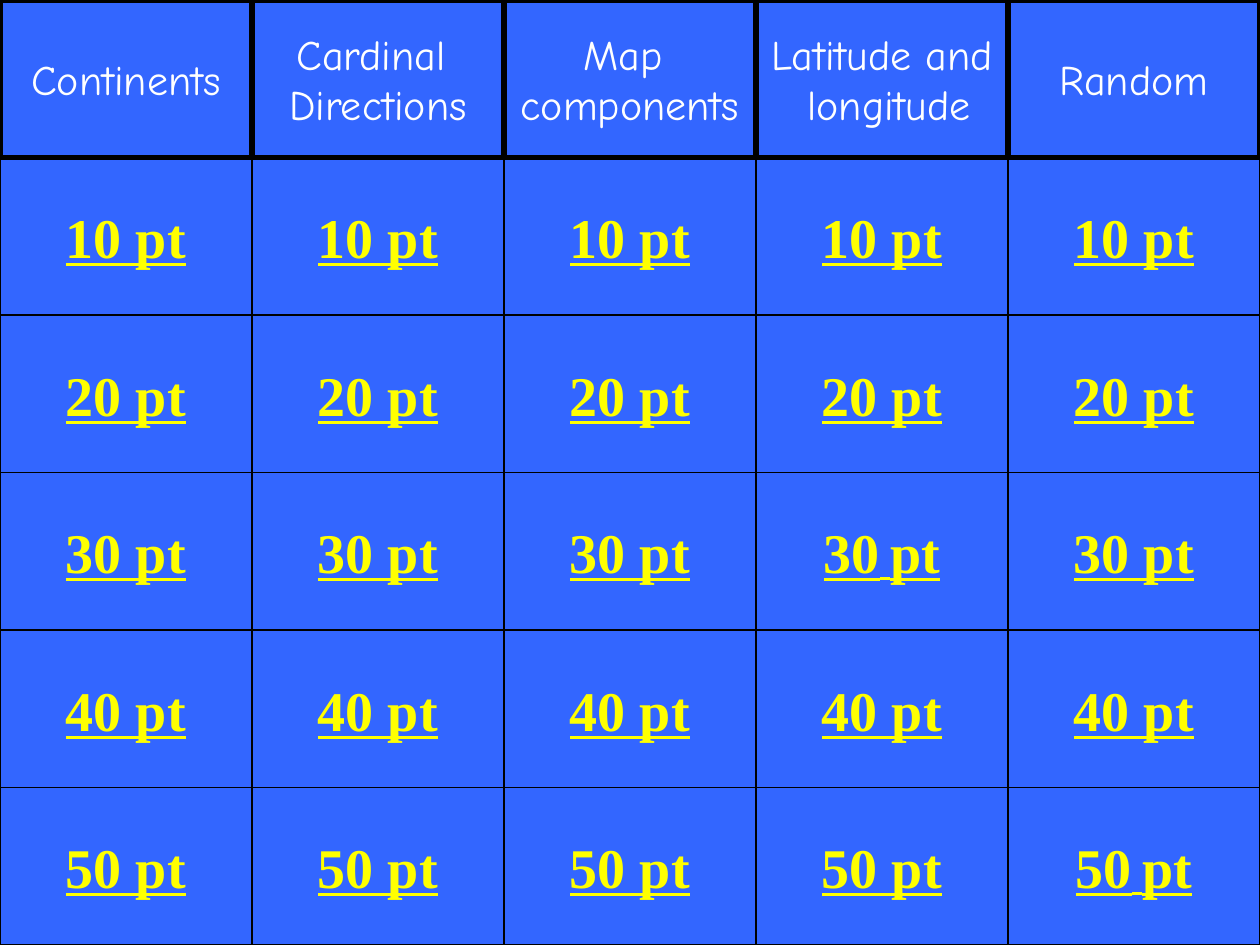
from pptx import Presentation
from pptx.dml.color import RGBColor
from pptx.enum.shapes import MSO_SHAPE
from pptx.enum.text import MSO_ANCHOR, PP_ALIGN
from pptx.util import Emu, Pt

BUTTON = MSO_SHAPE.ACTION_BUTTON_CUSTOM
RECTANGLE = MSO_SHAPE.RECTANGLE
MIDDLE = MSO_ANCHOR.MIDDLE
CENTER = PP_ALIGN.CENTER

EMU_PER_PX = 9525
SLIDE_WIDTH, SLIDE_HEIGHT = 960, 720
CELL_WIDTH, CELL_HEIGHT = 192, 120
BLUE, BLACK, WHITE, YELLOW = "3366FF", "000000", "FFFFFF", "FFFF00"

CATEGORIES = [
    "Continents",
    "Cardinal \nDirections",
    "Map \ncomponents",
    "Latitude and\n longitude",
    "Random",
]
POINTS = [10, 20, 30, 40, 50]
# (column, points) of the buttons with a smaller space
NARROW_SPACES = {(3, 30), (4, 50)}


def color(hex_code):
    return RGBColor.from_string(hex_code)


def add_cell(kind, column, row, text, line_width, font_name, size, text_color):
    shape = slide.shapes.add_shape(
        kind,
        Emu(column * CELL_WIDTH * EMU_PER_PX),
        Emu(row * CELL_HEIGHT * EMU_PER_PX),
        Emu(CELL_WIDTH * EMU_PER_PX),
        Emu(CELL_HEIGHT * EMU_PER_PX),
    )
    shape.shadow.inherit = False
    shape.fill.solid()
    shape.fill.fore_color.rgb = color(BLUE)
    shape.line.color.rgb = color(BLACK)
    shape.line.width = Pt(line_width)
    text_frame = shape.text_frame
    text_frame.text = text
    text_frame.word_wrap = False
    text_frame.vertical_anchor = MIDDLE
    for paragraph in text_frame.paragraphs:
        paragraph.alignment = CENTER
        for run in paragraph.runs:
            run.font.name = font_name
            run.font.size = Pt(size)
            run.font.color.rgb = color(text_color)
    return shape


presentation = Presentation()
presentation.slide_width = Emu(SLIDE_WIDTH * EMU_PER_PX)
presentation.slide_height = Emu(SLIDE_HEIGHT * EMU_PER_PX)
slide = presentation.slides.add_slide(presentation.slide_layouts[6])
slide.background.fill.solid()
slide.background.fill.fore_color.rgb = color(BLUE)

# Point buttons
for column in range(len(CATEGORIES)):
    for row, points in enumerate(POINTS, start=1):
        narrow = (column, points) in NARROW_SPACES
        text = str(points) if narrow else f"{points} pt"
        button = add_cell(BUTTON, column, row, text, 0.75,
                          "Times New Roman", 32, YELLOW)
        paragraph = button.text_frame.paragraphs[0]
        if narrow:
            for part in (" ", "pt"):
                paragraph.add_run().text = part
        for run in paragraph.runs:
            is_space = run.text == " "
            run.font.name = "Times New Roman"
            run.font.size = Pt(24 if is_space else 32)
            run.font.bold = not is_space
            run.font.underline = True
            run.font.color.rgb = color(YELLOW)

# Category headers, over the top edge of the buttons
for column, category in enumerate(CATEGORIES):
    add_cell(RECTANGLE, column, 0, category, 3, "Comic Neue", 24, WHITE)

presentation.save("out.pptx")
